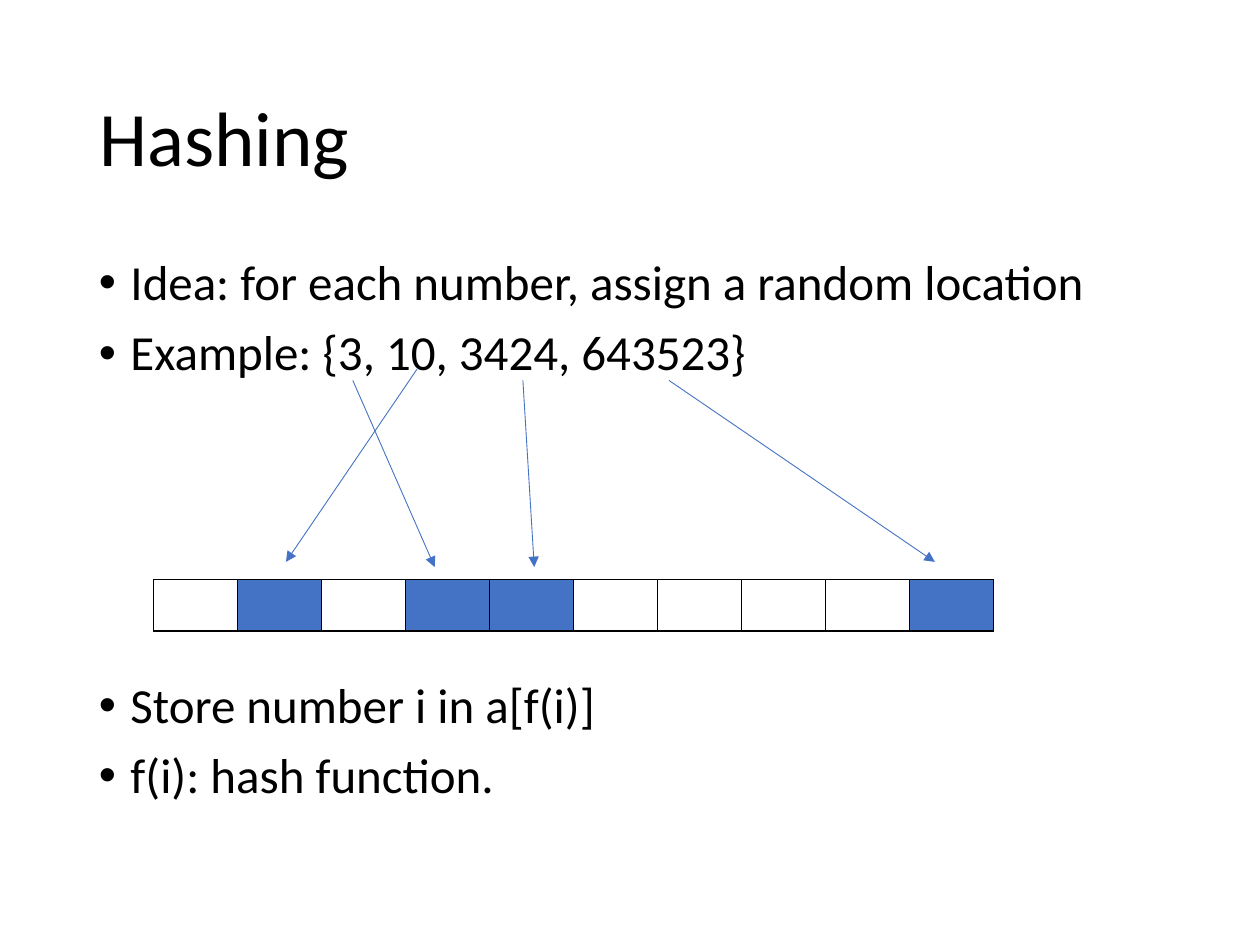
import pptx
import pptx.util
import pptx.oxml
import pptx.dml.color
import pptx.enum.text
import pptx.enum.shapes
from pptx.oxml.ns import nsdecls, qn

Pt = pptx.util.Pt
RGB = pptx.dml.color.RGBColor
BLACK = RGB(0, 0, 0)
WHITE = RGB(255, 255, 255)
BLUE = RGB(0x44, 0x72, 0xC4)
ANCHOR = pptx.enum.text.MSO_ANCHOR
LEFT = pptx.enum.text.PP_ALIGN.LEFT

TITLE = "Hashing"
POINTS = [
    ("Idea: for each number, assign a random location", 10),
    ("Example: {3, 10, 3424, 643523}", 10),
    ("Store number i in a[f(i)]", 171),
    ("f(i): hash function.", 10),
]
TITLE_BOX = (49.5, 28.8, 621, 104.4)
BODY_BOX = (49.5, 144, 621, 342.6)
SLOTS = 10
FILLED = {1, 3, 4, 9}
GRID_BOX = (87.84, 331.2, 480, 29.52)
ARROWS = [
    (201.6, 217.4, 248.4, 324),
    (238.3, 211, 163.4, 321.1),
    (298.8, 217.4, 305.3, 324),
    (382.3, 217.4, 534.2, 321.1),
]


def style(item, **values):
    for key, value in values.items():
        setattr(item, key, value)


def pts(box):
    return [Pt(v) for v in box]


def write(para, text, size, gap):
    style(para, text=text, alignment=LEFT, line_spacing=0.9,
          space_before=Pt(gap), space_after=Pt(0))
    font = para.runs[0].font
    style(font, name="Calibri", size=Pt(size), bold=False)
    font.color.rgb = BLACK


def bullet(para):
    props = para._p.get_or_add_pPr()
    props.set("marL", str(Pt(18)))
    props.set("indent", str(Pt(-18)))
    for tag, key, value in (("buFont", "typeface", "Arial"), ("buChar", "char", "•")):
        props.append(pptx.oxml.parse_xml(
            f'<a:{tag} {nsdecls("a")} {key}="{value}"/>'))


def border(cell):
    props = cell._tc.get_or_add_tcPr()
    for spot, side in enumerate("LRTB"):
        props.insert(spot, pptx.oxml.parse_xml(
            f'<a:ln{side} {nsdecls("a")} w="{Pt(1)}"><a:solidFill>'
            f'<a:srgbClr val="{BLACK}"/></a:solidFill></a:ln{side}>'))


def main():
    deck = pptx.Presentation()
    style(deck, slide_width=Pt(720), slide_height=Pt(540))
    slide = deck.slides.add_slide(deck.slide_layouts[5])
    shapes = slide.shapes

    title = shapes.title
    style(title, **dict(zip(("left", "top", "width", "height"), pts(TITLE_BOX))))
    style(title.text_frame, vertical_anchor=ANCHOR.MIDDLE, word_wrap=True)
    write(title.text_frame.paragraphs[0], TITLE, 44, 0)

    frame = shapes.add_textbox(*pts(BODY_BOX)).text_frame
    style(frame, word_wrap=True, vertical_anchor=ANCHOR.TOP)
    for num, (text, gap) in enumerate(POINTS):
        para = frame.add_paragraph() if num else frame.paragraphs[0]
        write(para, text, 28, gap)
        bullet(para)

    table = shapes.add_table(1, SLOTS, *pts(GRID_BOX)).table
    style(table, first_row=False, horz_banding=False)
    for num in range(SLOTS):
        table.columns[num].width = Pt(GRID_BOX[2] / SLOTS)
        cell = table.cell(0, num)
        cell.fill.solid()
        cell.fill.fore_color.rgb = BLUE if num in FILLED else WHITE
        border(cell)

    kind = pptx.enum.shapes.MSO_CONNECTOR.STRAIGHT
    for ends in ARROWS:
        arrow = shapes.add_connector(kind, *pts(ends))
        arrow.line.width = Pt(0.5)
        arrow.line.color.rgb = BLUE
        props = arrow._element.spPr
        props.find(qn("a:ln")).append(pptx.oxml.parse_xml(
            f'<a:tailEnd {nsdecls("a")} type="triangle"/>'))
        props.append(pptx.oxml.parse_xml(f'<a:effectLst {nsdecls("a")}/>'))

    deck.save("out.pptx")


if __name__ == "__main__":
    main()
